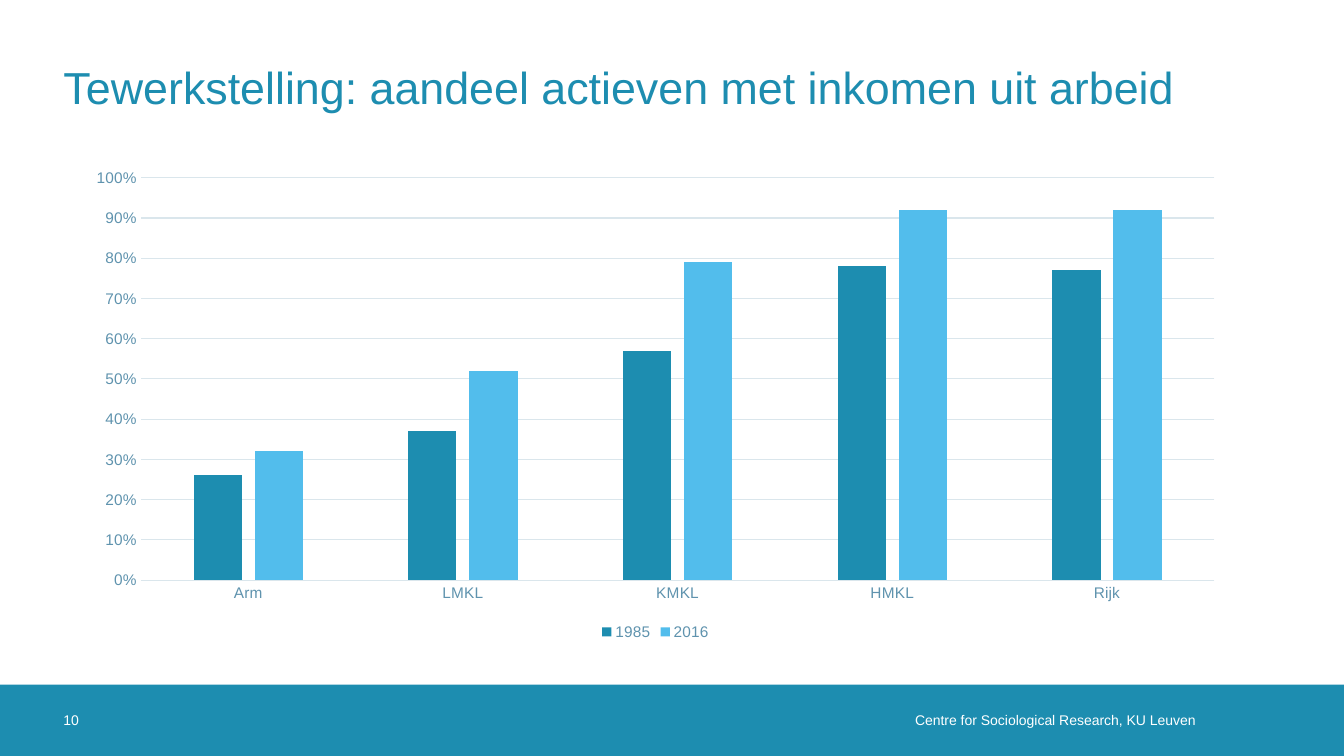
from dataclasses import dataclass

from pptx import Presentation
from pptx.chart.chart import Chart
from pptx.chart.data import CategoryChartData
from pptx.dml.color import RGBColor
from pptx.dml.fill import FillFormat
from pptx.enum.chart import XL_CHART_TYPE, XL_LEGEND_POSITION, XL_TICK_MARK
from pptx.enum.shapes import MSO_SHAPE
from pptx.enum.text import MSO_ANCHOR, MSO_AUTO_SIZE, PP_ALIGN
from pptx.dml.line import LineFormat
from pptx.slide import Slide
from pptx.text.text import Font, TextFrame
from pptx.util import Cm, Pt

TEAL, SKY, WHITE = "1D8DB0", "52BDEC", "FFFFFF"
AXIS_TEXT, GRID = "5F93AE", "DAE6EC"
SLIDE_WIDTH, SLIDE_HEIGHT = 33.87, 19.05
FOOTER_HEIGHT = 1.8
FOOTER_TOP = SLIDE_HEIGHT - FOOTER_HEIGHT
MARGIN = 1.6


@dataclass
class FooterText:
    text: str
    left: float
    width: float
    alignment: PP_ALIGN
    right_inset: float = 0


@dataclass
class YearSeries:
    year: str
    shares: tuple[float, ...]
    color: str


FOOTER_TEXTS = [
    FooterText("Centre for Sociological Research, KU Leuven", 16.76, 13.87, PP_ALIGN.RIGHT, 0.5),
    FooterText("10", MARGIN, FOOTER_HEIGHT, PP_ALIGN.LEFT),
]
INCOME_GROUPS = ["Arm", "LMKL", "KMKL", "HMKL", "Rijk"]
YEARS = [
    YearSeries("1985", (0.26, 0.37, 0.57, 0.78, 0.77), TEAL),
    YearSeries("2016", (0.32, 0.52, 0.79, 0.92, 0.92), SKY),
]


def rgb(color: str) -> RGBColor:
    return RGBColor.from_string(color)


def set_fill(fill: FillFormat, color: str) -> None:
    fill.solid()
    fill.fore_color.rgb = rgb(color)


def set_line(line: LineFormat, color: str) -> None:
    line.color.rgb = rgb(color)
    line.width = Pt(0.75)


def set_font(font: Font, size: float, color: str) -> None:
    font.name = "Arial"
    font.size = Pt(size)
    font.color.rgb = rgb(color)


def write_text(frame: TextFrame, text: str, size: float, color: str,
               alignment: PP_ALIGN = PP_ALIGN.LEFT, right_inset: float = 0) -> None:
    frame.text = text
    frame.word_wrap = True
    frame.auto_size = MSO_AUTO_SIZE.NONE
    frame.vertical_anchor = MSO_ANCHOR.MIDDLE
    frame.margin_left = frame.margin_top = frame.margin_bottom = 0
    frame.margin_right = Cm(right_inset)
    paragraph = frame.paragraphs[0]
    paragraph.alignment = alignment
    set_font(paragraph.font, size, color)


def add_footer(slide: Slide) -> None:
    band = slide.shapes.add_shape(
        MSO_SHAPE.RECTANGLE, 0, Cm(FOOTER_TOP), Cm(SLIDE_WIDTH), Cm(FOOTER_HEIGHT))
    band.shadow.inherit = False
    set_fill(band.fill, TEAL)
    band.line.fill.background()
    for item in FOOTER_TEXTS:
        box = slide.shapes.add_textbox(
            Cm(item.left), Cm(FOOTER_TOP), Cm(item.width), Cm(FOOTER_HEIGHT))
        write_text(box.text_frame, item.text, 10, WHITE, item.alignment, item.right_inset)


def add_title(slide: Slide) -> None:
    title = slide.shapes.title
    title.left, title.top, title.width, title.height = Cm(MARGIN), Cm(0.58), Cm(30.66), Cm(3.2)
    write_text(title.text_frame, "Tewerkstelling: aandeel actieven met inkomen uit arbeid", 32, TEAL)


def format_axes(chart: Chart) -> None:
    for axis in (chart.category_axis, chart.value_axis):
        axis.major_tick_mark = axis.minor_tick_mark = XL_TICK_MARK.NONE
        set_font(axis.tick_labels.font, 11, AXIS_TEXT)
    set_line(chart.category_axis.format.line, GRID)
    value_axis = chart.value_axis
    value_axis.minimum_scale, value_axis.maximum_scale = 0, 1
    value_axis.major_unit = 0.1
    value_axis.tick_labels.number_format = "0%"
    value_axis.tick_labels.number_format_is_linked = False
    value_axis.format.line.fill.background()
    set_line(value_axis.major_gridlines.format.line, GRID)


def add_employment_chart(slide: Slide) -> None:
    data = CategoryChartData(number_format="0%")
    data.categories = INCOME_GROUPS
    for item in YEARS:
        data.add_series(item.year, item.shares)
    chart = slide.shapes.add_chart(
        XL_CHART_TYPE.COLUMN_CLUSTERED, Cm(1.85), Cm(4.01), Cm(29.34), Cm(12.24), data).chart
    set_font(chart.font, 11, "2F4D5D")
    chart.has_title = False
    chart.has_legend = True
    chart.legend.position = XL_LEGEND_POSITION.BOTTOM
    chart.legend.include_in_layout = False
    set_font(chart.legend.font, 11, AXIS_TEXT)
    format_axes(chart)
    plot = chart.plots[0]
    plot.vary_by_categories = False
    plot.gap_width = 219
    plot.overlap = -27
    for series, item in zip(plot.series, YEARS):
        set_fill(series.format.fill, item.color)


def main() -> None:
    presentation = Presentation()
    presentation.slide_width, presentation.slide_height = Cm(SLIDE_WIDTH), Cm(SLIDE_HEIGHT)
    slide = presentation.slides.add_slide(presentation.slide_layouts[5])
    set_fill(slide.background.fill, WHITE)
    add_footer(slide)
    add_title(slide)
    add_employment_chart(slide)
    presentation.save("out.pptx")


if __name__ == "__main__":
    main()
